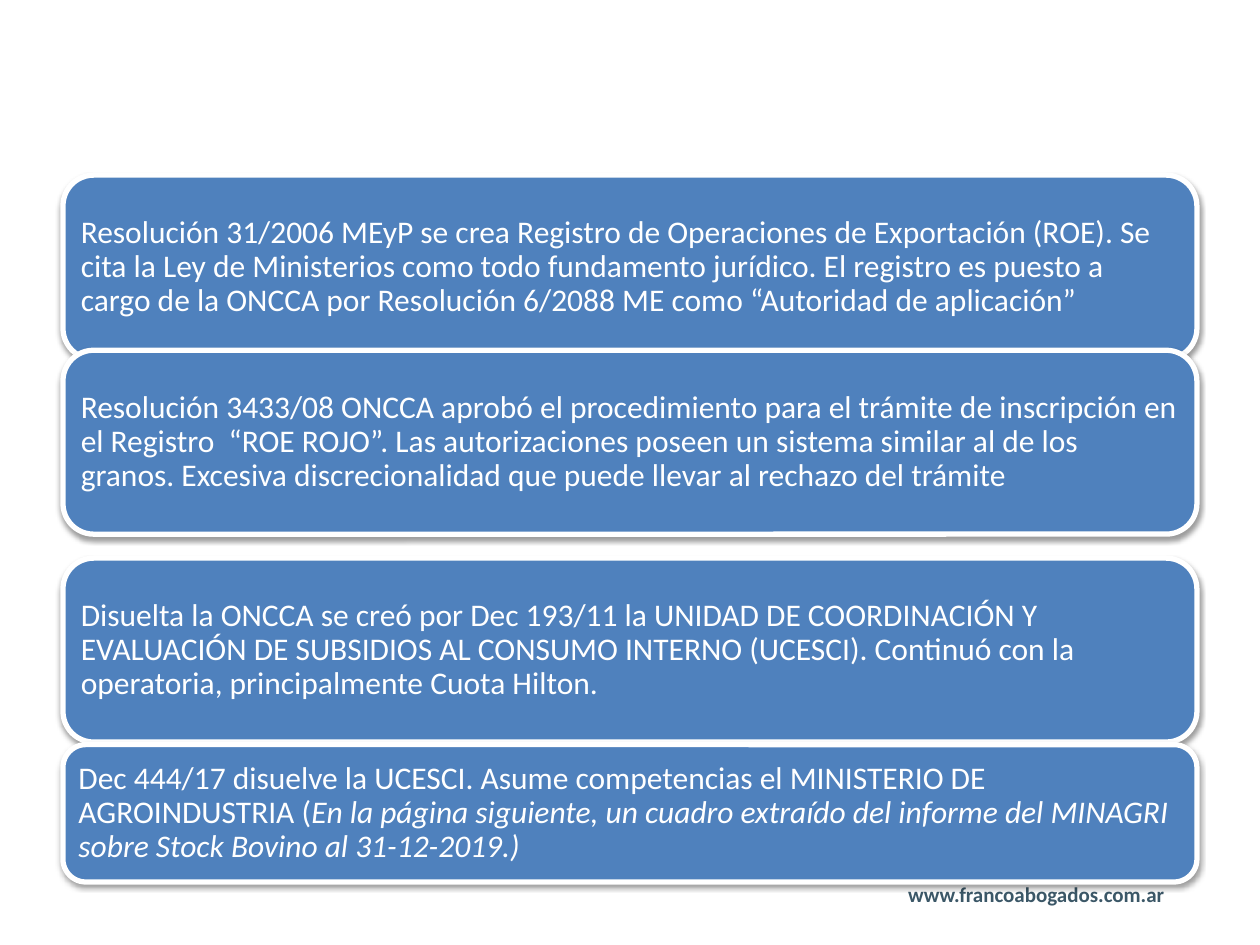
from lxml import etree
from pptx import Presentation
from pptx.dml.color import RGBColor
from pptx.enum.shapes import MSO_SHAPE
from pptx.enum.text import MSO_ANCHOR, PP_ALIGN
from pptx.oxml.ns import qn
from pptx.util import Inches, Pt

ROUNDED = MSO_SHAPE.ROUNDED_RECTANGLE
MIDDLE = MSO_ANCHOR.MIDDLE
LEFT = PP_ALIGN.LEFT

WIDTH, HEIGHT = 10, 7.5
MARGIN = 0.05 * WIDTH
CARD_WIDTH = WIDTH - 2 * MARGIN
TALL, SHORT = 1.46, 1.09

CARDS = [
    (1.39, TALL, "Resolución 31/2006 MEyP se crea Registro de Operaciones de Exportación (ROE). "
     "Se cita la Ley de Ministerios como todo fundamento jurídico. El registro es puesto a "
     "cargo de la ONCCA por Resolución 6/2088 ME como “Autoridad de aplicación”", ""),
    (2.78, TALL, "Resolución 3433/08 ONCCA aprobó el procedimiento para el trámite de inscripción "
     "en el Registro  “ROE ROJO”. Las autorizaciones poseen un sistema similar al de los "
     "granos. Excesiva discrecionalidad que puede llevar al rechazo del trámite", ""),
    (4.43, TALL, "Disuelta la ONCCA se creó por Dec 193/11 la UNIDAD DE COORDINACIÓN Y "
     "EVALUACIÓN DE SUBSIDIOS AL CONSUMO INTERNO (UCESCI). Continuó con la "
     "operatoria, principalmente Cuota Hilton.", ""),
    (5.91, SHORT, "Dec 444/17 disuelve la UCESCI. Asume competencias el MINISTERIO DE "
     "AGROINDUSTRIA (", "En la página siguiente, un cuadro extraído del informe del MINAGRI "
     "sobre Stock Bovino al 31-12-2019.)"),
]


def color(value):
    return RGBColor.from_string(value)


def add_run(p, text, size=18, fill="FFFFFF", bold=False, italic=False):
    r = p.add_run()
    r.text = text
    r.font.name = "Calibri"
    r.font.size = Pt(size)
    r.font.color.rgb = color(fill)
    r.font.bold = bold
    r.font.italic = italic


def add_shadow(sp):
    sp.shadow.inherit = False
    effects = sp._element.spPr.find(qn("a:effectLst"))
    shadow = etree.SubElement(effects, qn("a:outerShdw"), blurRad="40000",
                              dist="20000", dir="5400000", rotWithShape="0")
    black = etree.SubElement(shadow, qn("a:srgbClr"), val="000000")
    etree.SubElement(black, qn("a:alpha"), val="38000")


def add_card(s, top, height, text, italic_text):
    sp = s.shapes.add_shape(ROUNDED, Inches(MARGIN), Inches(top),
                            Inches(CARD_WIDTH), Inches(height))
    sp.fill.solid()
    sp.fill.fore_color.rgb = color("4F81BD")
    sp.line.color.rgb = color("FFFFFF")
    sp.line.width = Pt(3)
    add_shadow(sp)
    tf = sp.text_frame
    tf.word_wrap = True
    tf.vertical_anchor = MIDDLE
    tf.margin_left = tf.margin_right = tf.margin_top = tf.margin_bottom = Inches(0.07)
    p = tf.paragraphs[0]
    p.alignment = LEFT
    p.line_spacing = 0.9
    add_run(p, text)
    if italic_text:
        add_run(p, italic_text, italic=True)


def add_footer(s, text):
    sp = s.shapes.add_textbox(Inches(7.11), Inches(6.95), Inches(2.38), Inches(0.04 * HEIGHT))
    tf = sp.text_frame
    tf.word_wrap = True
    add_run(tf.paragraphs[0], text, size=12, fill="3B5767", bold=True)


def main():
    prs = Presentation()
    prs.slide_width, prs.slide_height = Inches(WIDTH), Inches(HEIGHT)
    s = prs.slides.add_slide(prs.slide_layouts[6])
    add_footer(s, "www.francoabogados.com.ar")
    for card in CARDS:
        add_card(s, *card)
    prs.save("out.pptx")


if __name__ == "__main__":
    main()
